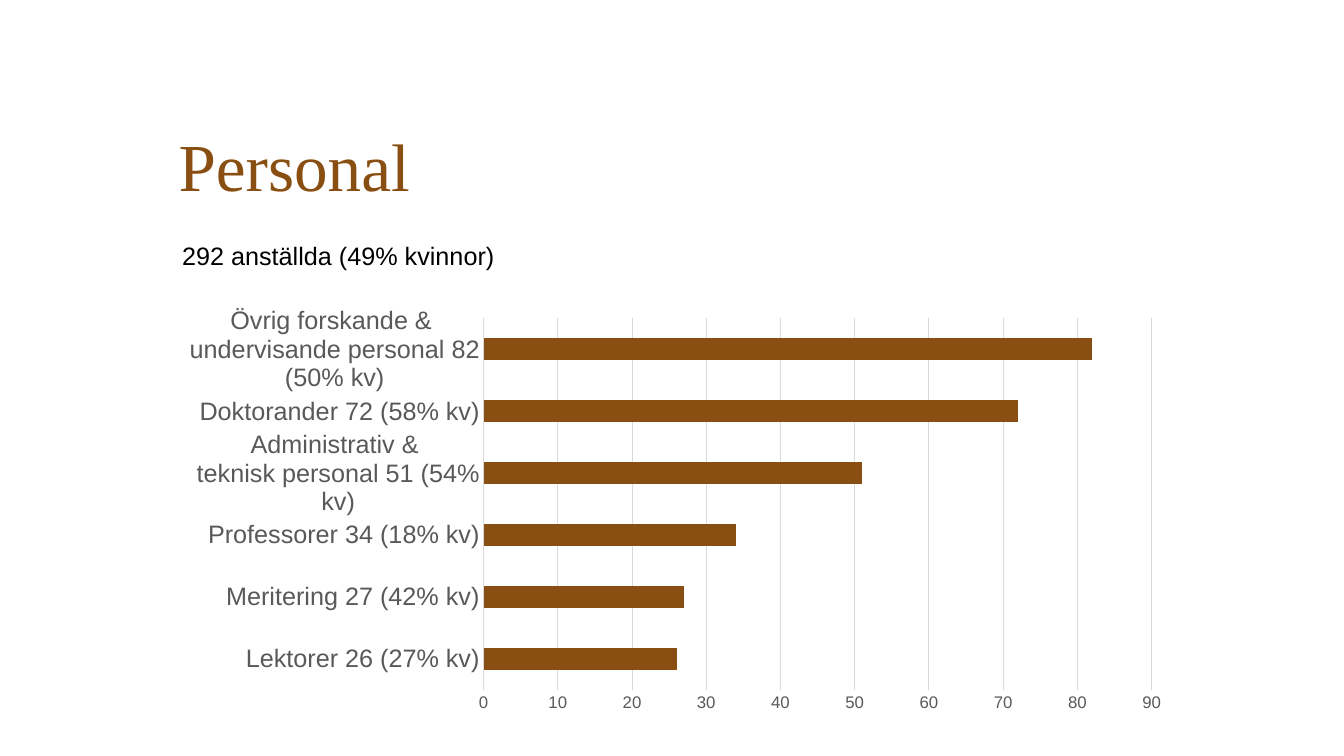
from dataclasses import dataclass

import pptx
import pptx.chart.data
import pptx.dml.color
import pptx.enum.chart
import pptx.enum.text
import pptx.util
from pptx.util import Cm, Pt


@dataclass(frozen=True)
class Theme:
    brown: str = "894E11"
    black: str = "000000"
    gray: str = "595959"
    rule: str = "D9D9D9"
    heading_font: str = "Times New Roman"
    body_font: str = "Arial"
    title_size: int = 48
    body_size: int = 18
    scale_size: int = 12
    rule_width: float = 0.75


THEME = Theme()

STAFF = {
    "Lektorer 26 (27% kv)": 26,
    "Meritering 27 (42% kv)": 27,
    "Professorer 34 (18% kv)": 34,
    "Administrativ & \nteknisk personal 51 (54% kv)": 51,
    "Doktorander 72 (58% kv)": 72,
    "Övrig forskande & \nundervisande personal 82 (50% kv)": 82,
}


def rgb(color):
    return pptx.dml.color.RGBColor.from_string(color)


def set_values(target, values):
    for name, value in values.items():
        setattr(target, name, value)


def style_font(font, name, size, color):
    set_values(font, {"name": name, "size": Pt(size), "bold": False})
    font.color.rgb = rgb(color)


def style_rule(line):
    line.color.rgb = rgb(THEME.rule)
    line.width = Pt(THEME.rule_width)


def add_text(slide, box, text, font_values, frame_values, line_spacing=1.0):
    """Add a one-paragraph text box; box is left, top, width, height in cm."""
    frame = slide.shapes.add_textbox(*map(Cm, box)).text_frame
    set_values(frame, {"word_wrap": True, **frame_values})
    paragraph = frame.paragraphs[0]
    paragraph.line_spacing = line_spacing
    run = paragraph.add_run()
    run.text = text
    style_font(run.font, *font_values)


def style_axis(axis, size):
    none = pptx.enum.chart.XL_TICK_MARK.NONE
    set_values(axis, {"major_tick_mark": none, "minor_tick_mark": none})
    style_font(axis.tick_labels.font, THEME.body_font, size, THEME.gray)


def add_bar_chart(slide, box, values):
    data = pptx.chart.data.CategoryChartData()
    data.categories = list(values)
    data.add_series("Series 1", list(values.values()))
    chart = slide.shapes.add_chart(
        pptx.enum.chart.XL_CHART_TYPE.BAR_CLUSTERED, *map(Cm, box), data
    ).chart
    set_values(chart, {"has_legend": False, "has_title": False})
    style_font(chart.font, THEME.body_font, THEME.scale_size, THEME.gray)

    plot = chart.plots[0]
    set_values(plot, {"gap_width": 182, "vary_by_categories": False})
    fill = plot.series[0].format.fill
    fill.solid()
    fill.fore_color.rgb = rgb(THEME.brown)

    style_axis(chart.category_axis, THEME.body_size)
    style_rule(chart.category_axis.format.line)

    scale = chart.value_axis
    style_axis(scale, THEME.scale_size)
    set_values(scale, {"minimum_scale": 0, "maximum_scale": 90, "major_unit": 10})
    scale.format.line.fill.background()
    style_rule(scale.major_gridlines.format.line)


def main():
    presentation = pptx.Presentation()
    set_values(presentation, {"slide_width": Cm(33.87), "slide_height": Cm(19.05)})
    slide = presentation.slides.add_slide(presentation.slide_layouts[6])

    add_text(
        slide, (4.5, 1, 24.5, 5), "Personal",
        (THEME.heading_font, THEME.title_size, THEME.brown),
        {
            "vertical_anchor": pptx.enum.text.MSO_ANCHOR.BOTTOM,
            "margin_left": 0, "margin_top": 0,
            "margin_right": 0, "margin_bottom": Cm(0.8),
        },
        line_spacing=0.9,
    )
    add_bar_chart(slide, (4.27, 7.52, 25.5, 10.62), STAFF)
    add_text(
        slide, (4.34, 5.94, 12.4, 1.03), "292 anställda (49% kvinnor)",
        (THEME.body_font, THEME.body_size, THEME.black),
        {"auto_size": pptx.enum.text.MSO_AUTO_SIZE.SHAPE_TO_FIT_TEXT},
    )
    presentation.save("out.pptx")


if __name__ == "__main__":
    main()
